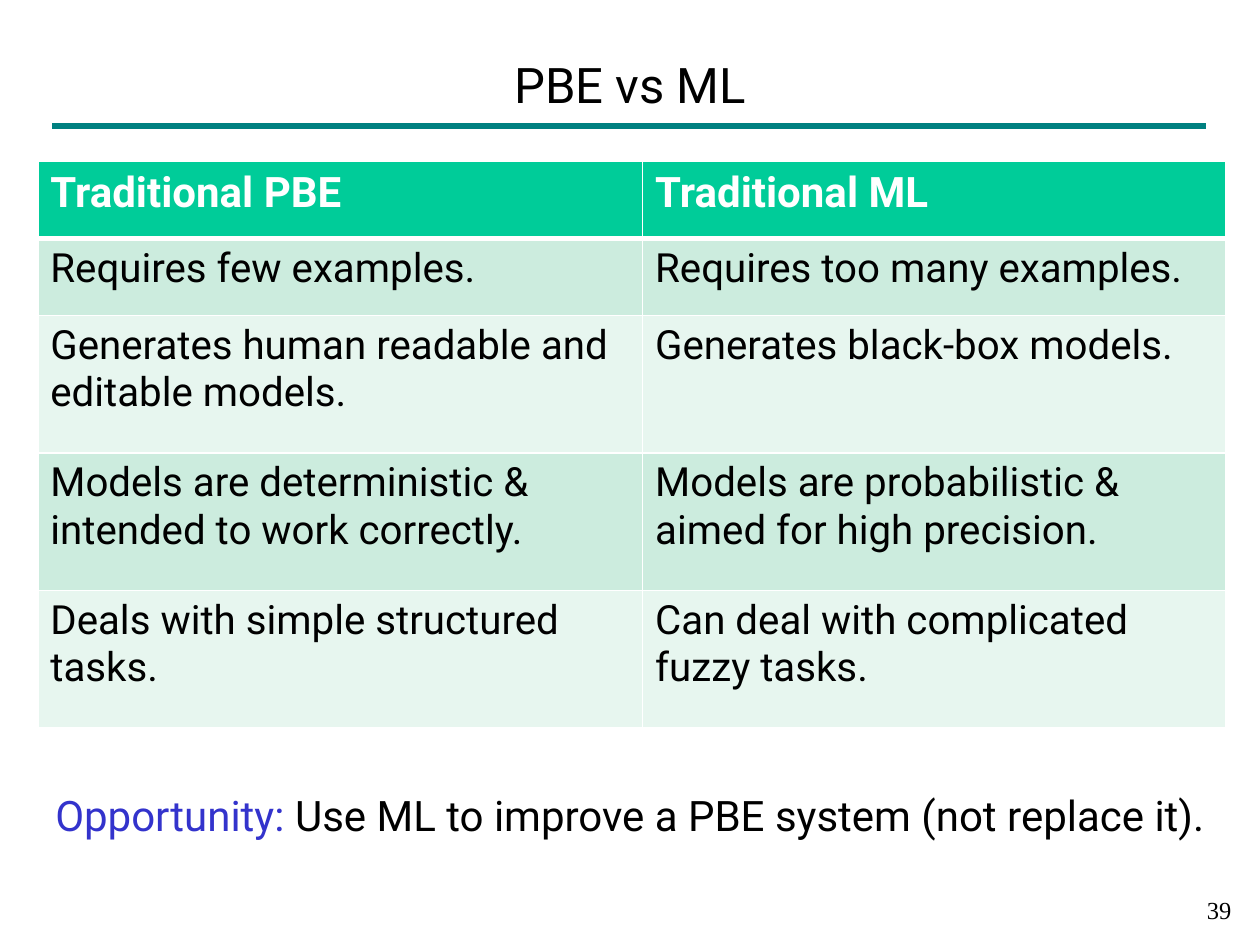
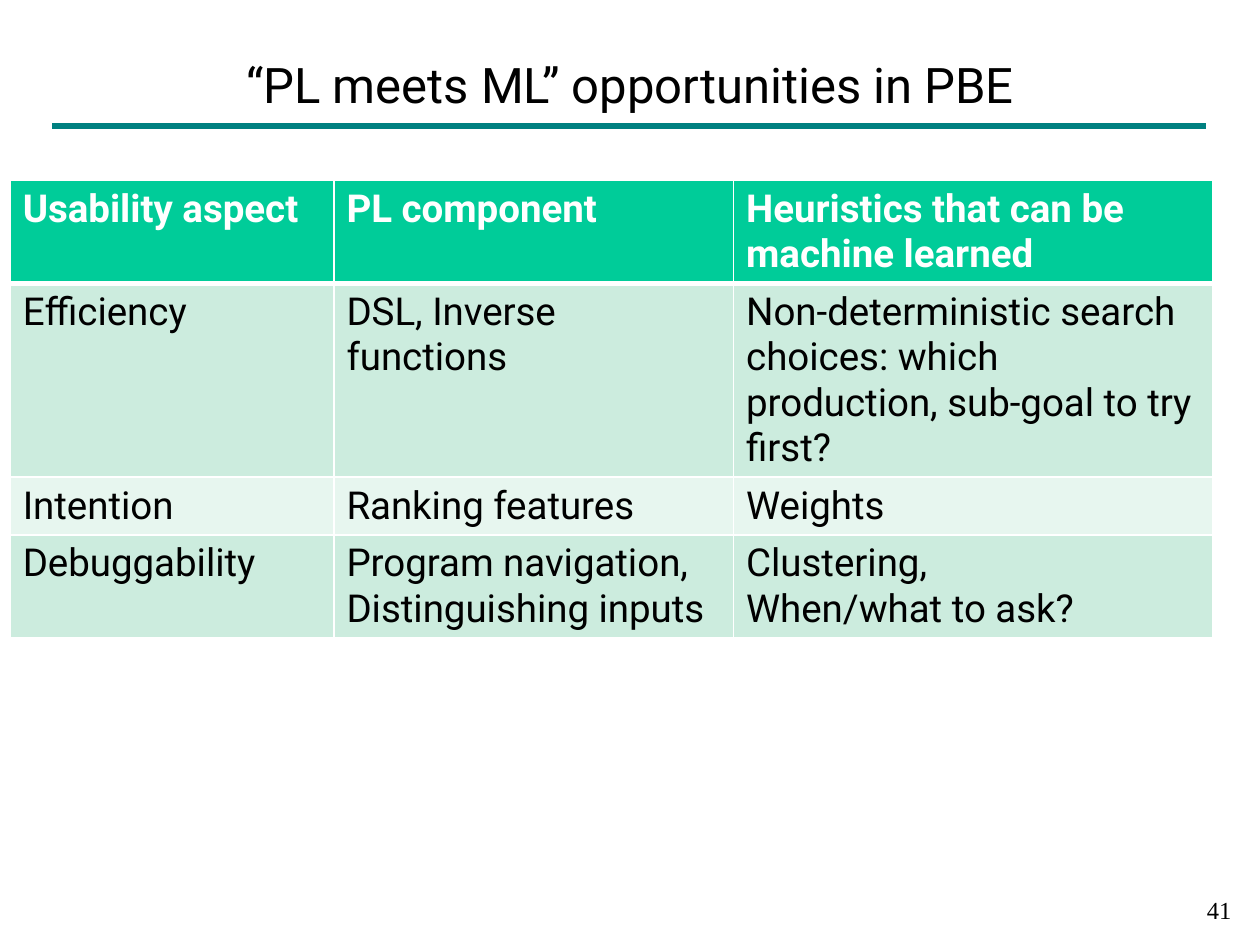
from lxml import etree
from pptx import Presentation
from pptx.dml.color import RGBColor
from pptx.enum.shapes import MSO_CONNECTOR
from pptx.enum.text import MSO_ANCHOR, MSO_AUTO_SIZE, PP_ALIGN
from pptx.oxml.ns import qn
from pptx.util import Pt

LINE = MSO_CONNECTOR.STRAIGHT
MIDDLE, TOP = MSO_ANCHOR.MIDDLE, MSO_ANCHOR.TOP
FIXED = MSO_AUTO_SIZE.NONE
LEFT, CENTER, RIGHT = PP_ALIGN.LEFT, PP_ALIGN.CENTER, PP_ALIGN.RIGHT

THEME = {
    "main": "Roboto", "serif": "Times New Roman",
    "ink": "000000", "white": "FFFFFF", "rule": "008080", "accent": "3333CC",
    "head": "00CC99", "bands": ["CCECDE", "E7F6EF"],
    "title": 28, "note": 24, "number": 14,
}

SLIDES = [
    {
        "title": "PBE vs ML", "span": (54, 612), "number": "39",
        "table": {
            "left": 21.6, "top": 92.4, "sizes": (24, 23),
            "cols": [345.6, 333.1], "rows": [44, 44, 78.5, 78.5, 78.5],
            "cells": [
                ["Traditional PBE", "Traditional ML"],
                ["Requires few examples.", "Requires too many examples."],
                ["Generates human readable and editable models.",
                 "Generates black-box models."],
                ["Models are deterministic & intended to work correctly.",
                 "Models are probabilistic & aimed for high precision."],
                ["Deals with simple structured tasks.",
                 "Can deal with complicated fuzzy tasks."],
            ],
        },
        "note": [("Opportunity: ", "accent"),
                 ("Use ML to improve a PBE system (not replace it).", "ink")],
    },
    {
        "title": "“PL meets ML” opportunities in PBE", "span": (35.3, 649.4),
        "number": "41",
        "table": {
            "left": 5.8, "top": 103.2, "sizes": (22, 22),
            "cols": [185, 228.4, 273.6], "rows": [29.5] * 4,
            "cells": [
                ["Usability aspect", "PL component",
                 "Heuristics that can be machine learned"],
                ["Efficiency", "DSL, Inverse functions",
                 "Non-deterministic search choices: which production, "
                 "sub-goal to try first?"],
                ["Intention", "Ranking features", "Weights"],
                ["Debuggability", "Program navigation, Distinguishing inputs",
                 "Clustering,\nWhen/what to ask?"],
            ],
        },
        "note": [],
    },
]


def write(frame, runs, size, face="main", bold=False, align=LEFT):
    frame.word_wrap = True
    frame.clear()
    para = frame.paragraphs[0]
    for text, ink in runs:
        for spot, part in enumerate(text.split("\n")):
            if spot:
                para = frame.add_paragraph()
            para.alignment = align
            para.space_before = Pt(0)
            run = para.add_run()
            run.text = part
            look = {"name": THEME[face], "size": Pt(size), "bold": bold}
            for key, value in look.items():
                setattr(run.font, key, value)
            run.font.color.rgb = RGBColor.from_string(THEME[ink])


def edge(cell, widths):
    props = cell._tc.get_or_add_tcPr()
    for side, width in widths.items():
        line = etree.SubElement(props, qn(f"a:ln{side}"), w=str(Pt(width)))
        fill = etree.SubElement(line, qn("a:solidFill"))
        etree.SubElement(fill, qn("a:srgbClr"), val=THEME["white"])


deck = Presentation()
deck.slide_width, deck.slide_height = Pt(720), Pt(540)

for page in SLIDES:
    slide = deck.slides.add_slide(deck.slide_layouts[5])
    shapes = slide.shapes

    rule = shapes.add_connector(LINE, Pt(30), Pt(72), Pt(689), Pt(72))
    rule.line.width = Pt(4)
    rule.line.color.rgb = RGBColor.from_string(THEME["rule"])
    etree.SubElement(rule._element.spPr, qn("a:effectLst"))

    title = shapes.title
    left, width = page["span"]
    place = {"left": left, "top": 23.8, "width": width, "height": 48.2}
    for key, value in place.items():
        setattr(title, key, Pt(value))
    title.text_frame.auto_size = FIXED
    title.text_frame.vertical_anchor = MIDDLE
    write(title.text_frame, [(page["title"], "ink")], THEME["title"],
          align=CENTER)

    plan = page["table"]
    cols, rows = plan["cols"], plan["rows"]
    grid = shapes.add_table(len(rows), len(cols), Pt(plan["left"]),
                            Pt(plan["top"]), Pt(sum(cols)), Pt(sum(rows))).table
    for col, width in zip(grid.columns, cols):
        col.width = Pt(width)
    for row, height in zip(grid.rows, rows):
        row.height = Pt(height)
    for r, texts in enumerate(plan["cells"]):
        head = r == 0
        back = THEME["head"] if head else THEME["bands"][(r - 1) % 2]
        for c, text in enumerate(texts):
            cell = grid.cell(r, c)
            edge(cell, {"L": 1, "R": 1, "T": 3 if r == 1 else 1,
                        "B": 3 if head else 1})
            cell.fill.solid()
            cell.fill.fore_color.rgb = RGBColor.from_string(back)
            cell.vertical_anchor = TOP
            write(cell.text_frame, [(text, "white" if head else "ink")],
                  plan["sizes"][0 if head else 1], bold=head)

    if page["note"]:
        note = shapes.add_textbox(Pt(24.5), Pt(447.8), Pt(680.4), Pt(36))
        write(note.text_frame, page["note"], THEME["note"])

    number = shapes.add_textbox(Pt(560.9), Pt(507.6), Pt(149.8), Pt(30.2))
    write(number.text_frame, [(page["number"], "ink")], THEME["number"],
          face="serif", align=RIGHT)

deck.save("out.pptx")
